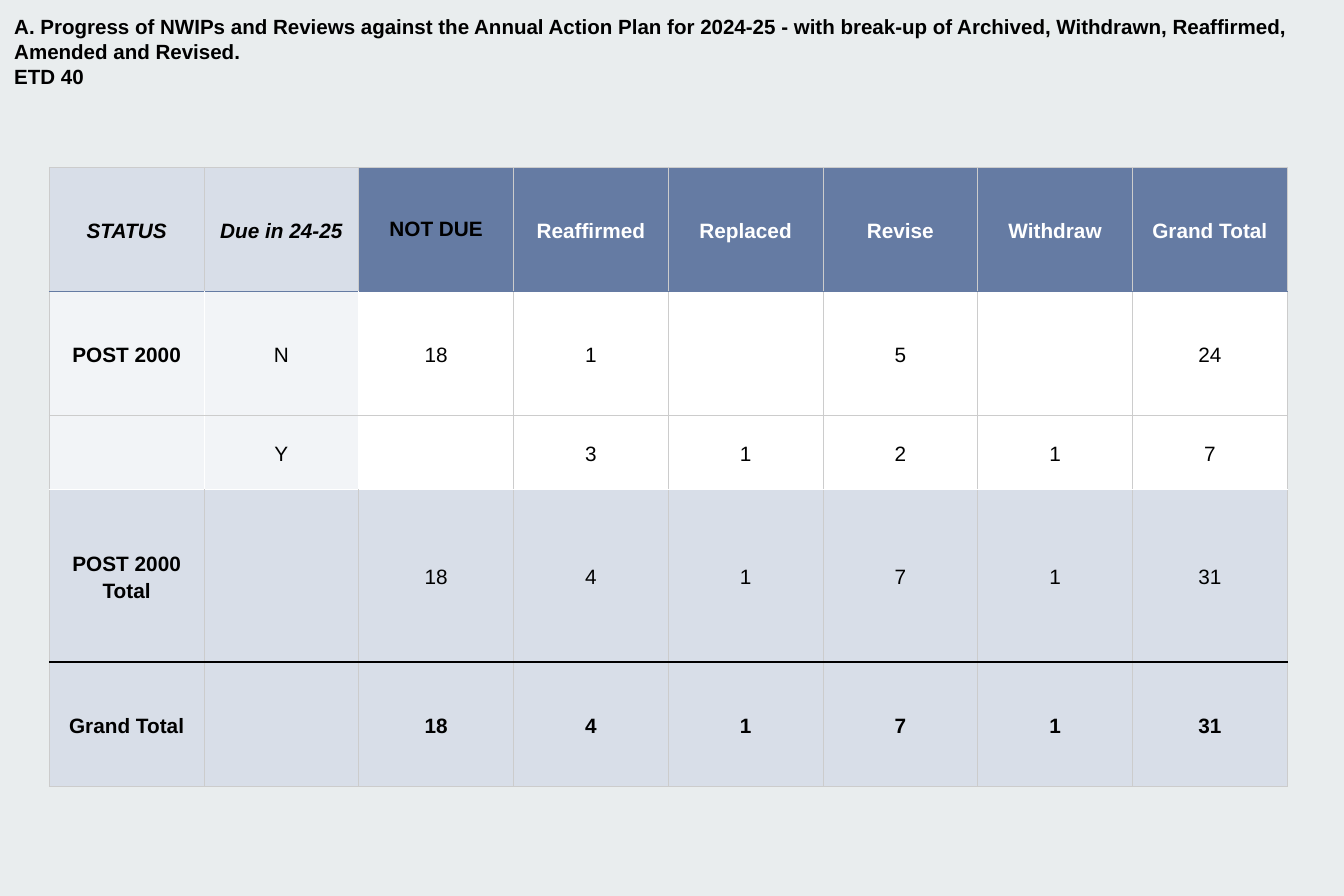
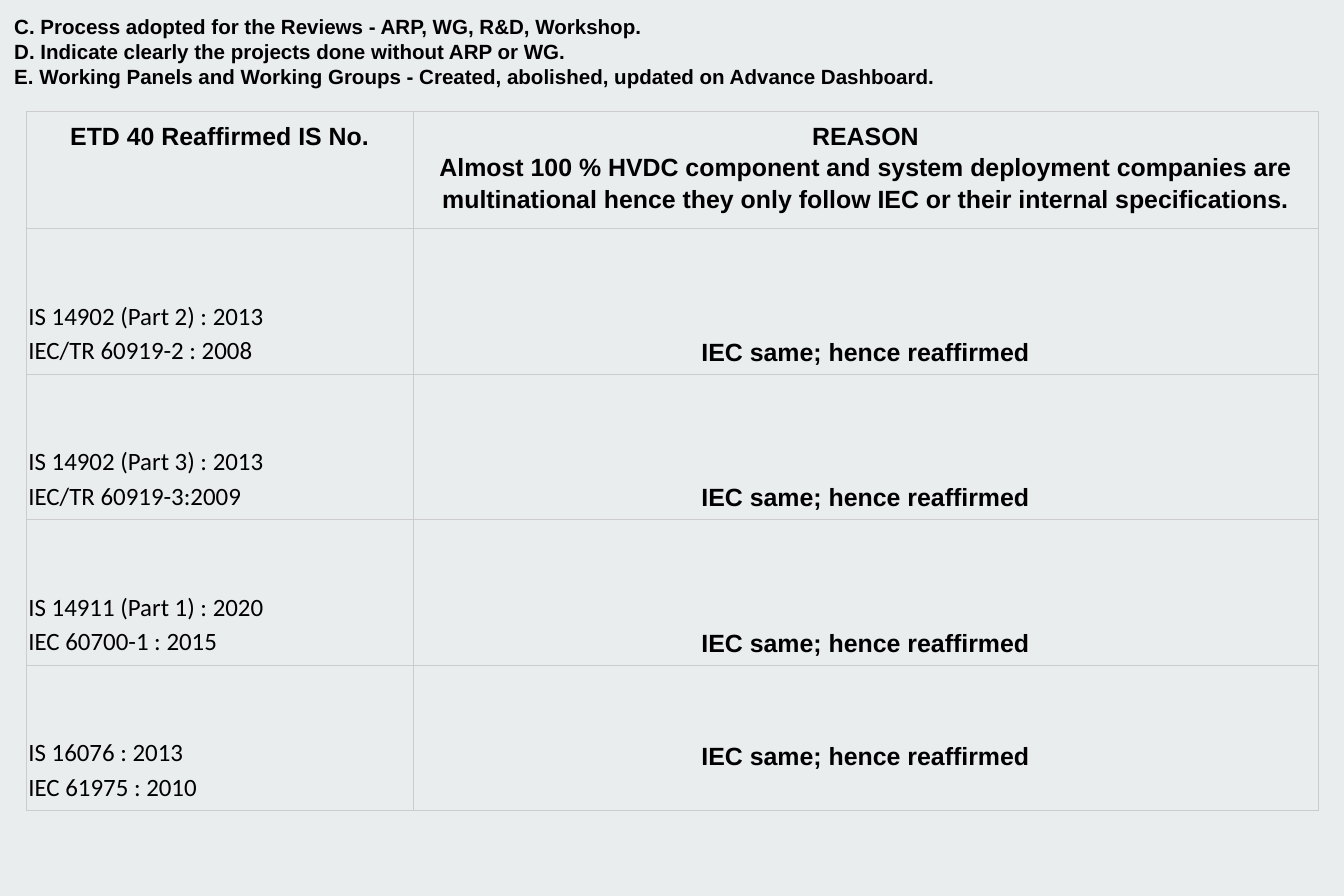
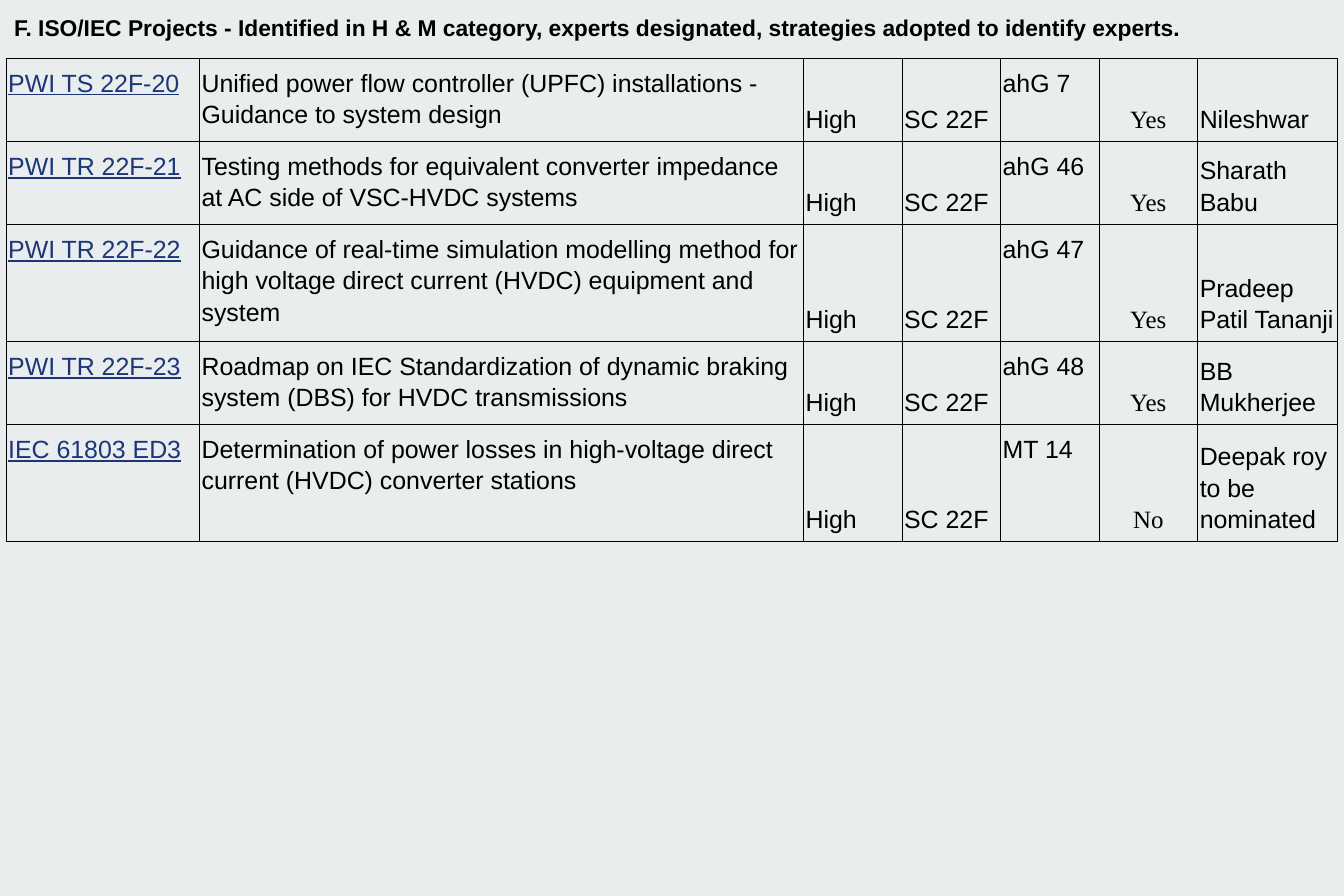
from dataclasses import dataclass, replace
from typing import Callable

from lxml.etree import SubElement as Sub
from pptx import Presentation
from pptx.dml.color import RGBColor as Rgb
from pptx.enum.text import MSO_ANCHOR as Anchor, PP_ALIGN as Align
from pptx.oxml.ns import qn
from pptx.util import Inches, Pt

WIDE, HIGH = 18, 12
HUES = {
    "page": "E9EDEE", "ink": "000000", "white": "FFFFFF", "grid": "CCCCCC",
    "slate": "657BA3", "mist": "D8DEE8", "pale": "F2F4F7", "link": "1C3678",
}
PLAIN = "{2D5ABB26-0587-4C30-8999-92F81FD0307C}"  # table style without fills
THIN, THICK = 0.67, 2
LEAD = 1.14
SIDES = ("lnL", "lnR", "lnT", "lnB")


@dataclass(frozen=True)
class Type:
    size: float = 24
    font: str = "Arial"
    hue: str = "ink"
    bold: bool = False
    slant: bool = False
    under: bool = False


@dataclass(frozen=True)
class Edge:
    hue: str = "grid"
    width: float = THIN


@dataclass(frozen=True)
class Look:
    type: Type = Type()
    align: Align = Align.LEFT
    anchor: Anchor = Anchor.TOP
    lead: float = LEAD
    foot: float = 0.1
    fill: str = ""
    edges: tuple[Edge, ...] = (Edge(),) * 4  # in the order of SIDES


@dataclass(frozen=True)
class Grid:
    left: float
    top: float
    cols: list[float]
    rows: list[float]
    cells: list[list[str]]
    look: Callable[[int, int], Look]


@dataclass(frozen=True)
class Page:
    title: str
    size: float
    grid: Grid


def tint(name: str) -> Rgb:
    return Rgb.from_string(HUES[name])


def write(frame, text: str, kind: Type, align: Align, lead: float) -> None:
    """Put each line of the text in a paragraph of its own."""
    for i, line in enumerate(text.split("\n")):
        para = frame.paragraphs[0] if i == 0 else frame.add_paragraph()
        para.alignment, para.line_spacing = align, lead
        if not line:
            continue
        run = para.add_run()
        run.text = line
        font = run.font
        font.size, font.name = Pt(kind.size), kind.font
        font.bold, font.italic = kind.bold, kind.slant
        font.underline = kind.under
        font.color.rgb = tint(kind.hue)


def border(cell, edges: tuple[Edge, ...]) -> None:
    props = cell._tc.get_or_add_tcPr()
    for side, edge in zip(SIDES, edges):
        line = Sub(props, qn("a:" + side), w=str(Pt(edge.width)))
        fill = Sub(line, qn("a:solidFill"))
        Sub(fill, qn("a:srgbClr"), val=HUES[edge.hue])


def draw_cell(cell, text: str, look: Look) -> None:
    border(cell, look.edges)
    if look.fill:
        cell.fill.solid()
        cell.fill.fore_color.rgb = tint(look.fill)
    else:
        cell.fill.background()
    cell.margin_left = cell.margin_right = Inches(0.03)
    cell.margin_top, cell.margin_bottom = Inches(0.1), Inches(look.foot)
    cell.vertical_anchor = look.anchor
    write(cell.text_frame, text, look.type, look.align, look.lead)


def draw_grid(slide, grid: Grid) -> None:
    box = [Inches(n) for n in (grid.left, grid.top, sum(grid.cols), sum(grid.rows))]
    table = slide.shapes.add_table(len(grid.rows), len(grid.cols), *box).table
    table.first_row = table.horz_banding = False
    table._tbl.tblPr.find(qn("a:tableStyleId")).text = PLAIN
    for col, width in zip(table.columns, grid.cols):
        col.width = Inches(width)
    for row, height in zip(table.rows, grid.rows):
        row.height = Inches(height)
    for r, line in enumerate(grid.cells):
        for c, text in enumerate(line):
            draw_cell(table.cell(r, c), text, grid.look(r, c))


def draw_title(slide, text: str, size: float) -> None:
    box = slide.shapes.add_textbox(0, 0, Inches(WIDE), Inches(1.25))
    frame = box.text_frame
    frame.word_wrap = True
    frame.margin_left = frame.margin_right = Inches(0.19)
    frame.margin_top = frame.margin_bottom = Inches(0.19)
    write(frame, text, Type(size, bold=True), Align.LEFT, 1.0)


# Status table: a header, two detail rows and two total rows
def status(r: int, c: int) -> Look:
    side = c < 2
    head, last = r == 0, r == 4
    kind = Type(20, bold=head or last or c == 0, slant=head and side,
                hue="white" if head and c > 2 else "ink")
    if head:
        fill = "mist" if side else "slate"
    elif r > 2:
        fill = "mist"
    else:
        fill = "pale" if side else "white"
    # Rules between rows, from the top of the table to its foot
    rules = [Edge(), Edge("slate", 1), Edge(), Edge("white"),
             Edge("ink", THICK), Edge()]
    light = r in (1, 2)
    left = Edge("white" if light and c in (1, 2) else "grid")
    right = Edge("white" if light and side else "grid")
    return Look(kind, Align.CENTER, Anchor.MIDDLE,
                lead=1.0 if head and c == 2 else LEAD, fill=fill,
                edges=(left, right, rules[r], rules[r + 1]))


# Reason table: the last reason stands one line higher
def reason(r: int, c: int) -> Look:
    if r == 0:
        return Look(Type(bold=True), Align.CENTER)
    if c == 0:
        return Look(Type(font="Calibri"), anchor=Anchor.BOTTOM)
    return Look(Type(bold=True), Align.CENTER, Anchor.BOTTOM,
                foot=0.53 if r == 4 else 0.1)


# Project table: one look for each column
BASE = Look(edges=(Edge("ink"),) * 4)
LOW = replace(BASE, anchor=Anchor.BOTTOM)
LOOKS = [
    replace(BASE, type=Type(hue="link", under=True)), BASE, LOW, LOW, BASE,
    replace(LOW, type=Type(font="Times New Roman"), align=Align.CENTER), LOW,
]


def project(r: int, c: int) -> Look:
    return LOOKS[c]


SAME = "IEC same; hence reaffirmed"
TALLY = [
    ["STATUS", "Due in 24-25", "NOT DUE", "Reaffirmed", "Replaced", "Revise",
     "Withdraw", "Grand Total"],
    ["POST 2000", "N", "18", "1", "", "5", "", "24"],
    ["", "Y", "", "3", "1", "2", "1", "7"],
    ["POST 2000 Total", "", "18", "4", "1", "7", "1", "31"],
    ["Grand Total", "", "18", "4", "1", "7", "1", "31"],
]
CODES = [
    "IS 14902 (Part 2) : 2013\nIEC/TR 60919-2 : 2008",
    "IS 14902 (Part 3) : 2013\nIEC/TR 60919-3:2009",
    "IS 14911 (Part 1) : 2020\nIEC 60700-1 : 2015",
    "IS 16076 : 2013\nIEC 61975 : 2010",
]
CAUSES = [
    ["ETD 40 Reaffirmed IS No.",
     "REASON\nAlmost 100 % HVDC component and system deployment companies are "
     "multinational hence they only follow IEC or their internal specifications."],
    *([code, SAME] for code in CODES),
]
WORKS = [
    ("PWI TS 22F-20", "Unified power flow controller (UPFC) installations - "
     "Guidance to system design", "ahG 7", "Yes", "Nileshwar"),
    ("PWI TR 22F-21", "Testing methods for equivalent converter impedance at AC "
     "side of VSC-HVDC systems", "ahG 46", "Yes", "Sharath Babu"),
    ("PWI TR 22F-22", "Guidance of real-time simulation modelling method for high "
     "voltage direct current (HVDC) equipment and system",
     "ahG 47", "Yes", "Pradeep Patil Tananji"),
    ("PWI TR 22F-23", "Roadmap on IEC Standardization of dynamic braking system "
     "(DBS) for HVDC transmissions", "ahG 48", "Yes", "BB Mukherjee"),
    ("IEC 61803 ED3", "Determination of power losses in high-voltage direct current "
     "(HVDC) converter stations", "MT 14", "No", "Deepak roy to be nominated"),
]
TASKS = [[code, name, "High", "SC 22F", *rest] for code, name, *rest in WORKS]

PAGES = [
    Page("A. Progress of NWIPs and Reviews against the Annual Action Plan for 2024-25 "
         "- with break-up of Archived, Withdrawn, Reaffirmed, Amended and Revised.\n"
         "ETD 40", 19.8,
         Grid(0.66, 2.24, [16.58 / 8] * 8, [1.66, 1.66, 1, 2.31, 1.66],
              TALLY, status)),
    Page("C. Process adopted for the Reviews - ARP, WG, R&D, Workshop.\n"
         "D. Indicate clearly the projects done without ARP or WG.\n"
         "E. Working Panels and Working Groups - Created, abolished, updated on "
         "Advance Dashboard.", 19.8,
         Grid(0.35, 1.49, [5.18, 12.12], [1.48] + [1.95] * 4, CAUSES, reason)),
    Page("F. ISO/IEC Projects - Identified in H & M category, experts designated, "
         "strategies adopted to identify experts.", 22,
         Grid(0.08, 0.78, [2.59, 8.09] + [1.32] * 4 + [1.87],
              [1.05, 1.05, 1.49, 1.05, 1.49], TASKS, project)),
]


def main() -> None:
    deck = Presentation()
    deck.slide_width, deck.slide_height = Inches(WIDE), Inches(HIGH)
    back = deck.slide_master.background.fill
    back.solid()
    back.fore_color.rgb = tint("page")
    for page in PAGES:
        slide = deck.slides.add_slide(deck.slide_layouts[6])
        draw_title(slide, page.title, page.size)
        draw_grid(slide, page.grid)
    deck.save("out.pptx")


if __name__ == "__main__":
    main()
